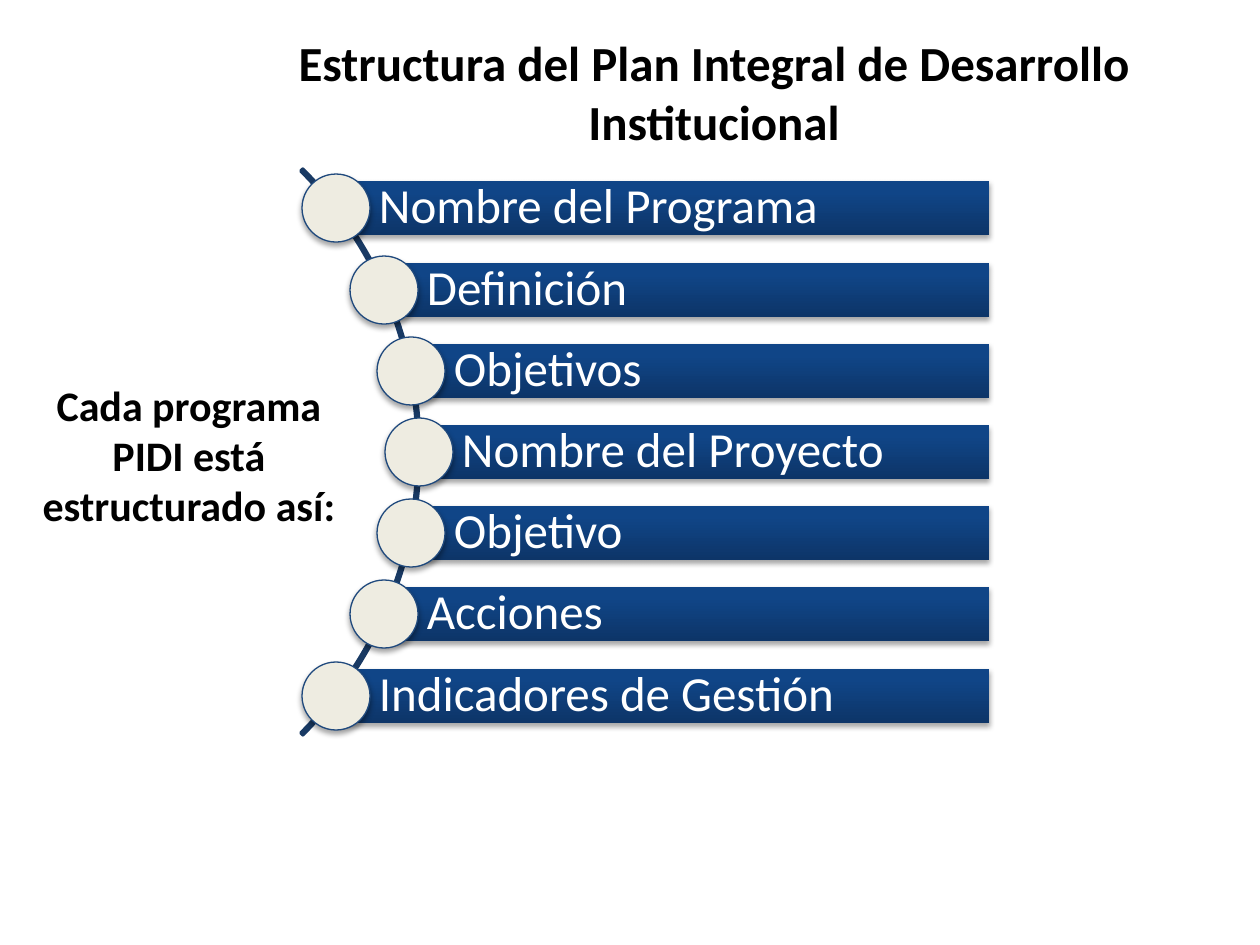
import math
from pptx import Presentation
from pptx.dml.color import RGBColor
from pptx.enum import shapes, text
from pptx.oxml import parse_xml
from pptx.oxml.ns import nsdecls, qn
from pptx import util as u

PX = 914400 / 126
BLACK = RGBColor(0x00, 0x00, 0x00)
WHITE = RGBColor(0xFF, 0xFF, 0xFF)
CREAM = RGBColor(0xEE, 0xEC, 0xE1)
NAVY = RGBColor(0x19, 0x3A, 0x64)
BLUE = RGBColor(0x1F, 0x49, 0x7D)
DARK = RGBColor(0x0D, 0x35, 0x68)
MID = RGBColor(0x10, 0x45, 0x87)
DEEP = RGBColor(0x0E, 0x45, 0x8A)
STOPS = [(0, DARK), (80, MID), (100, DEEP)]

ROWS = ["Nombre del Programa", "Definición", "Objetivos", "Nombre del Proyecto",
        "Objetivo", "Acciones", "Indicadores de Gestión"]
ARC_X, ARC_Y, RADIUS = 20, 452, 400
STEP = 81.25
RIGHT, BAR_H, DOT = 989, 54, 68


def put(obj, **values):
    for name, value in values.items():
        setattr(obj, name, value)


def emu(*lengths):
    return [u.Emu(round(n * PX)) for n in lengths]


class Deck:
    font = "Calibri"

    def __init__(self, wide, high):
        self.prs = Presentation()
        self.prs.slide_width, self.prs.slide_height = emu(wide, high)
        self.slide = self.prs.slides.add_slide(self.prs.slide_layouts[6])

    def fill_in(self, shape, words, size, color, align, **frame):
        """Put one styled paragraph in the shape."""
        put(shape.text_frame, word_wrap=True, **frame)
        para = shape.text_frame.paragraphs[0]
        para.alignment = align
        run = para.add_run()
        run.text = words
        put(run.font, name=self.font, size=u.Pt(size))
        run.font.color.rgb = color
        return para, run

    def label(self, words, box, size):
        shape = self.slide.shapes.add_textbox(*emu(*box))
        _, run = self.fill_in(shape, words, size, BLACK, text.PP_ALIGN.CENTER,
                              vertical_anchor=text.MSO_ANCHOR.TOP)
        run.font.bold = True

    def shape(self, kind, box, fill=None, line=None, width=1):
        """Add a preset shape without shadow; no colour means no fill or line."""
        shape = self.slide.shapes.add_shape(kind, *emu(*box))
        if fill is None:
            shape.fill.background()
        else:
            shape.fill.solid()
            shape.fill.fore_color.rgb = fill
        if line is None:
            shape.line.fill.background()
        else:
            shape.line.color.rgb = line
            shape.line.width = u.Pt(width)
        shape.shadow.inherit = False
        return shape

    def shade(self, shape):
        """Drop a soft shadow straight below the shape."""
        effects = shape.element.spPr.find(qn("a:effectLst"))
        effects.append(parse_xml(
            f'<a:outerShdw {nsdecls("a")} blurRad="{u.Pt(3.1)}" dist="{u.Pt(1.8)}" '
            'dir="5400000" rotWithShape="0"><a:srgbClr val="000000">'
            '<a:alpha val="35000"/></a:srgbClr></a:outerShdw>'))

    def blend(self, shape, stops):
        """Swap the solid fill for a gradient that runs upwards."""
        marks = "".join(f'<a:gs pos="{at * 1000}"><a:srgbClr val="{color}"/></a:gs>'
                        for at, color in stops)
        props = shape.element.spPr
        props.replace(props.find(qn("a:solidFill")), parse_xml(
            f'<a:gradFill {nsdecls("a")} rotWithShape="1"><a:gsLst>{marks}</a:gsLst>'
            '<a:lin ang="16200000" scaled="0"/></a:gradFill>'))

    def arc(self, x, y, radius):
        shape = self.shape(shapes.MSO_SHAPE.BLOCK_ARC,
                           (x - radius, y - radius, 2 * radius, 2 * radius),
                           line=NAVY, width=2)
        for i, value in enumerate((189, 27, 0.0034)):
            shape.adjustments[i] = value

    def bar(self, words, x, y):
        shape = self.shape(shapes.MSO_SHAPE.RECTANGLE,
                           (x, y - BAR_H / 2, RIGHT - x, BAR_H), fill=MID)
        self.blend(shape, STOPS)
        self.shade(shape)
        left, pad = emu(43, 10)
        para, _ = self.fill_in(shape, words, 28, WHITE, text.PP_ALIGN.LEFT,
                               vertical_anchor=text.MSO_ANCHOR.MIDDLE, margin_left=left,
                               margin_right=pad, margin_top=pad, margin_bottom=pad)
        para.line_spacing = 0.9

    def dot(self, x, y):
        self.shade(self.shape(shapes.MSO_SHAPE.OVAL, (x - DOT / 2, y - DOT / 2, DOT, DOT),
                              fill=CREAM, line=BLUE, width=0.75))


def main():
    deck = Deck(1260, 945)
    deck.label("Cada programa PIDI está estructurado así:", (25, 373, 328, 179), 24)
    deck.arc(ARC_X, ARC_Y, RADIUS)
    for i, words in enumerate(ROWS):
        rise = STEP * (i - len(ROWS) // 2)
        x = round(ARC_X + math.sqrt((RADIUS - 1) ** 2 - rise ** 2))
        y = round(ARC_Y + rise)
        deck.bar(words, x, y)
        deck.dot(x, y)
    deck.label("Estructura del Plan Integral de Desarrollo Institucional",
               (203, 26, 1022, 93), 28)
    deck.prs.save("out.pptx")


if __name__ == "__main__":
    main()
